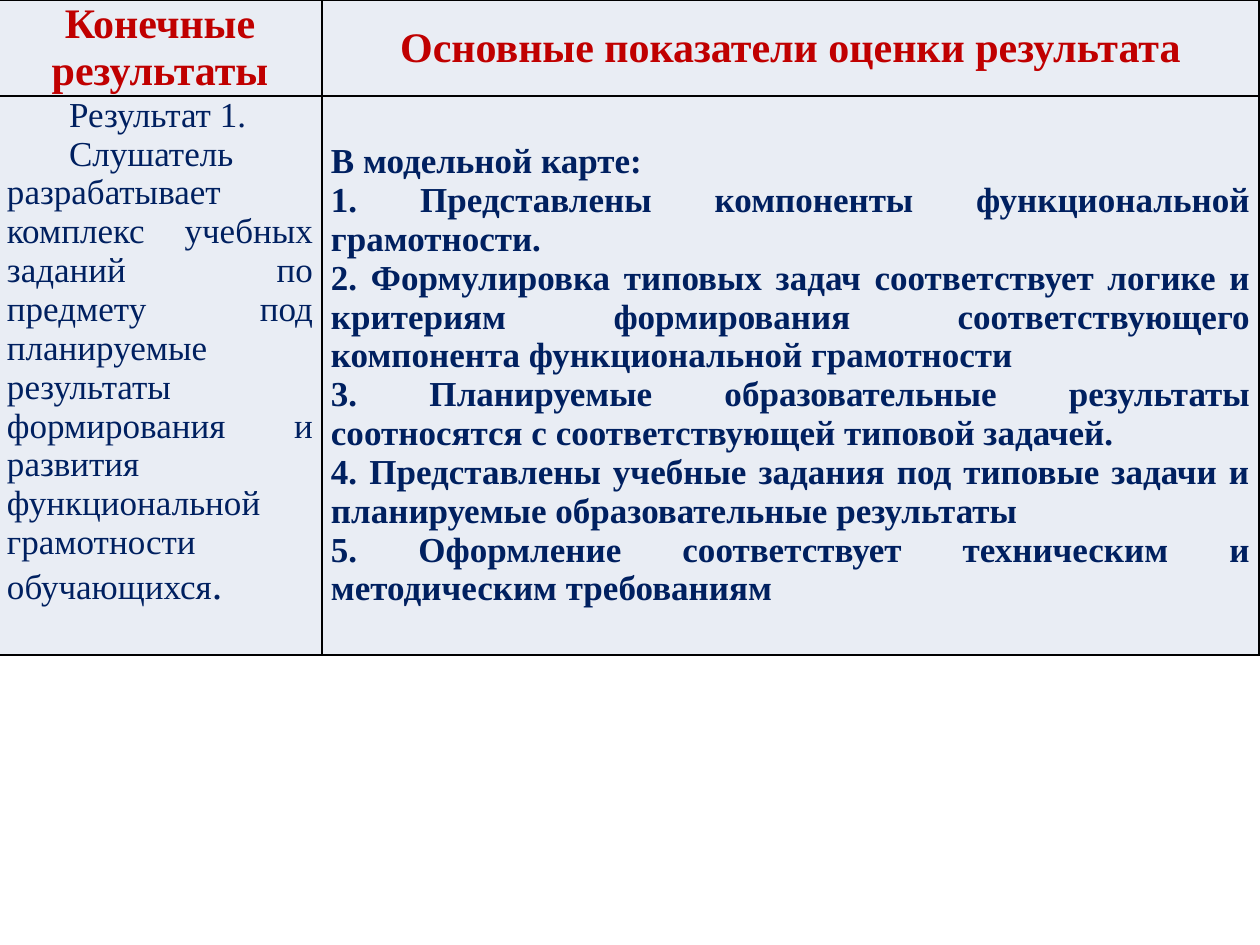
from lxml import etree
from pptx import Presentation
from pptx.dml.color import RGBColor
from pptx.enum.text import MSO_ANCHOR, PP_ALIGN
from pptx.oxml.ns import qn
from pptx.util import Pt

PX = 914400 / 126
RED = RGBColor(0xC0, 0x00, 0x00)
NAVY = RGBColor(0x00, 0x20, 0x60)
PALE = RGBColor(0xE9, 0xED, 0xF4)
BLACK = RGBColor(0x00, 0x00, 0x00)
FONT = "Times New Roman"
MID, TOP = MSO_ANCHOR.MIDDLE, MSO_ANCHOR.TOP
CENTER, JUST = PP_ALIGN.CENTER, PP_ALIGN.JUSTIFY


def px(n):
    return round(n * PX)


def write(par, text, size=20, color=NAVY, bold=False, align=JUST, indent=0):
    par.alignment = align
    if indent:
        props = par._p.get_or_add_pPr()
        props.set("marL", "0")
        props.set("indent", str(px(indent)))
    run = par.add_run()
    run.text = text
    run.font.name = FONT
    run.font.size = Pt(size)
    run.font.bold = bold
    run.font.color.rgb = color


deck = Presentation()
deck.slide_width, deck.slide_height = px(1260), px(945)
slide = deck.slides.add_slide(deck.slide_layouts[6])

# Table grid
cols, rows = [324, 937], [96, 559]
grid = slide.shapes.add_table(
    2, 2, px(-2), 0, px(sum(cols)), px(sum(rows))).table
for col, width in zip(grid.columns, cols):
    col.width = px(width)
for row, height in zip(grid.rows, rows):
    row.height = px(height)

# Cell margins, borders and fill
for cell in grid.iter_cells():
    cell.margin_left = cell.margin_right = px(9)
    cell.margin_top = cell.margin_bottom = 0
    cell.vertical_anchor = MID
    props = cell._tc.get_or_add_tcPr()
    for side in ("a:lnL", "a:lnR", "a:lnT", "a:lnB"):
        line = etree.SubElement(props, qn(side), w=str(Pt(1)))
        fill = etree.SubElement(line, qn("a:solidFill"))
        etree.SubElement(fill, qn("a:srgbClr"), val=str(BLACK))
    cell.fill.solid()
    cell.fill.fore_color.rgb = PALE

# Header row
heads = ["Конечные результаты", "Основные показатели оценки результата"]
for i, head in enumerate(heads):
    write(grid.cell(0, i).text_frame.paragraphs[0], head,
          size=24, color=RED, bold=True, align=CENTER)

# Expected result
goal = grid.cell(1, 0)
goal.vertical_anchor = TOP
frame = goal.text_frame
write(frame.paragraphs[0], "Результат 1.", indent=62)
par = frame.add_paragraph()
write(par, "Слушатель разрабатывает комплекс учебных заданий по предмету "
      "под планируемые результаты формирования и развития "
      "функциональной грамотности обучающихся", indent=62)
write(par, ".", size=24, indent=62)

# Indicators
marks = [
    "В модельной карте:",
    "1. Представлены компоненты функциональной грамотности.",
    "2. Формулировка типовых задач соответствует логике и критериям "
    "формирования соответствующего компонента функциональной грамотности",
    "3. Планируемые образовательные результаты соотносятся "
    "с соответствующей типовой задачей.",
    "4. Представлены учебные задания под типовые задачи "
    "и планируемые образовательные результаты",
    "5. Оформление соответствует техническим и методическим требованиям",
]
frame = grid.cell(1, 1).text_frame
for i, mark in enumerate(marks):
    par = frame.add_paragraph() if i else frame.paragraphs[0]
    write(par, mark, bold=True)

deck.save("out.pptx")
